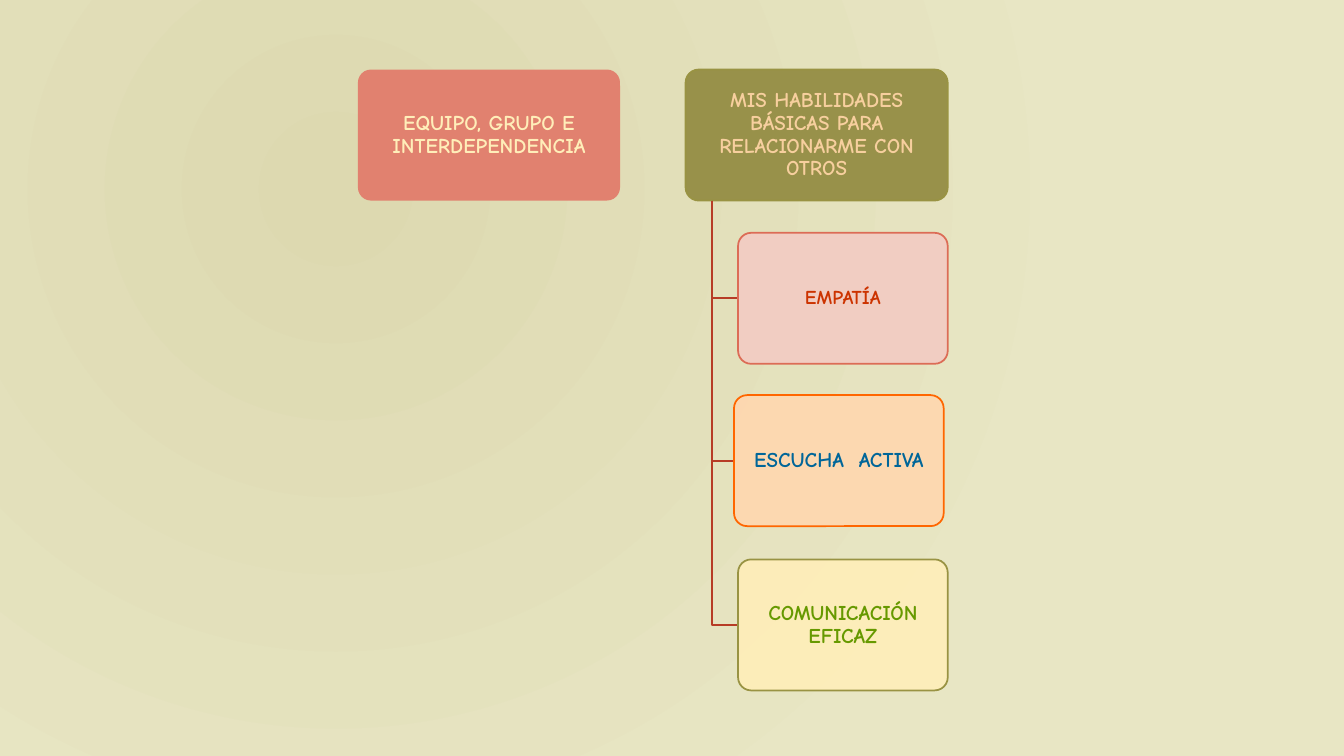
from lxml import etree
from pptx import Presentation
from pptx.dml.color import RGBColor
from pptx.enum.shapes import MSO_SHAPE
from pptx.enum.text import MSO_ANCHOR, PP_ALIGN
from pptx.oxml.ns import qn
from pptx.util import Inches, Pt

ROUND = MSO_SHAPE.ROUNDED_RECTANGLE
MIDDLE = MSO_ANCHOR.MIDDLE
CENTER = PP_ALIGN.CENTER

FONT = "Comic Neue"
COLORS = {
    "sage": "DDD9B0", "sand": "E8E6C4",
    "coral": "E1816F", "olive": "98914A", "moss": "999343",
    "cream": "FFEEB9", "peach": "F7CF9E", "brick": "B73C26",
    "pink": "F3CBC3", "rose": "DC6C56", "red": "CC3300",
    "apricot": "FFD7AF", "orange": "FF6600", "blue": "006699",
    "green": "669900",
}


def rgb(name):
    return RGBColor.from_string(COLORS[name])


def write(frame, text, size=15, color="cream", bold=True):
    frame.word_wrap = True
    frame.vertical_anchor = MIDDLE
    frame.margin_left = frame.margin_right = Inches(0.07)
    frame.margin_top = frame.margin_bottom = Inches(0.06)
    para = frame.paragraphs[0]
    para.alignment = CENTER
    para.line_spacing = 0.9
    run = para.add_run()
    run.text = text
    run.font.name = FONT
    run.font.size = Pt(size)
    run.font.bold = bold
    run.font.color.rgb = rgb(color)


class Canvas:
    def __init__(self, slide):
        self.slide = slide
        self.shapes = slide.shapes

    def backdrop(self, inner, outer):
        fill = self.slide.background.fill
        fill.gradient()
        for stop, color, place in zip(fill.gradient_stops, (inner, outer), (0, 1)):
            stop.color.rgb = rgb(color)
            stop.position = place
        grad = next(self.slide.element.iter(qn("a:gradFill")))
        grad.remove(grad.find(qn("a:lin")))
        glow = etree.SubElement(grad, qn("a:path"), path="circle")
        etree.SubElement(glow, qn("a:fillToRect"),
                         l="50000", t="50000", r="100000", b="100000")

    def card(self, left, top, width, text, fill, line=None, alpha=None, **style):
        box = self.shapes.add_shape(ROUND, Inches(left), Inches(top),
                                    Inches(width), Inches(CARD_H))
        box.adjustments[0] = 0.1
        box.shadow.inherit = False
        box.fill.solid()
        box.fill.fore_color.rgb = rgb(fill)
        if alpha:
            tint = box.fill._xPr.find(qn("a:solidFill"))[0]
            etree.SubElement(tint, qn("a:alpha"), val=str(alpha * 1000))
        if line:
            box.line.color.rgb = rgb(line)
            box.line.width = Pt(1.25)
        else:
            box.line.fill.background()
        write(box.text_frame, text, **style)

    def branch(self, left, top, right, bottom, width):
        pen = self.shapes.build_freeform(Inches(left), Inches(top))
        pen.add_line_segments([(Inches(left), Inches(bottom)),
                               (Inches(right), Inches(bottom))], close=False)
        elbow = pen.convert_to_shape()
        elbow.shadow.inherit = False
        elbow.fill.background()
        elbow.line.color.rgb = rgb("brick")
        elbow.line.width = Pt(width)


CARD_H = 1.3
HEAD_W = 2.6
HEAD_TOP = 0.69
SKILL_W = 2.08
TRUNK = 7.06
SKILLS = [
    (7.32, 2.31, "EMPATÍA", "pink", "rose", "red", 14, 1.25),
    (7.28, 3.92, "ESCUCHA  ACTIVA", "apricot", "orange", "blue", 15, 1.25),
    (7.32, 5.55, "COMUNICACIÓN EFICAZ", "cream", "moss", "green", 15, 1.5),
]


def main():
    deck = Presentation()
    deck.slide_width = Inches(13.33)
    deck.slide_height = Inches(7.5)
    page = Canvas(deck.slides.add_slide(deck.slide_layouts[6]))
    page.backdrop("sage", "sand")
    page.card(3.55, HEAD_TOP, HEAD_W, "EQUIPO, GRUPO E INTERDEPENDENCIA", "coral")
    page.card(6.8, HEAD_TOP, HEAD_W,
              "MIS HABILIDADES BÁSICAS PARA RELACIONARME CON OTROS",
              "olive", line="moss", color="peach")
    for left, top, text, fill, line, color, size, width in SKILLS:
        page.branch(TRUNK, HEAD_TOP + CARD_H, left, top + CARD_H / 2, width)
        page.card(left, top, SKILL_W, text, fill, line=line, alpha=90,
                  color=color, size=size)
    deck.save("out.pptx")


if __name__ == "__main__":
    main()
